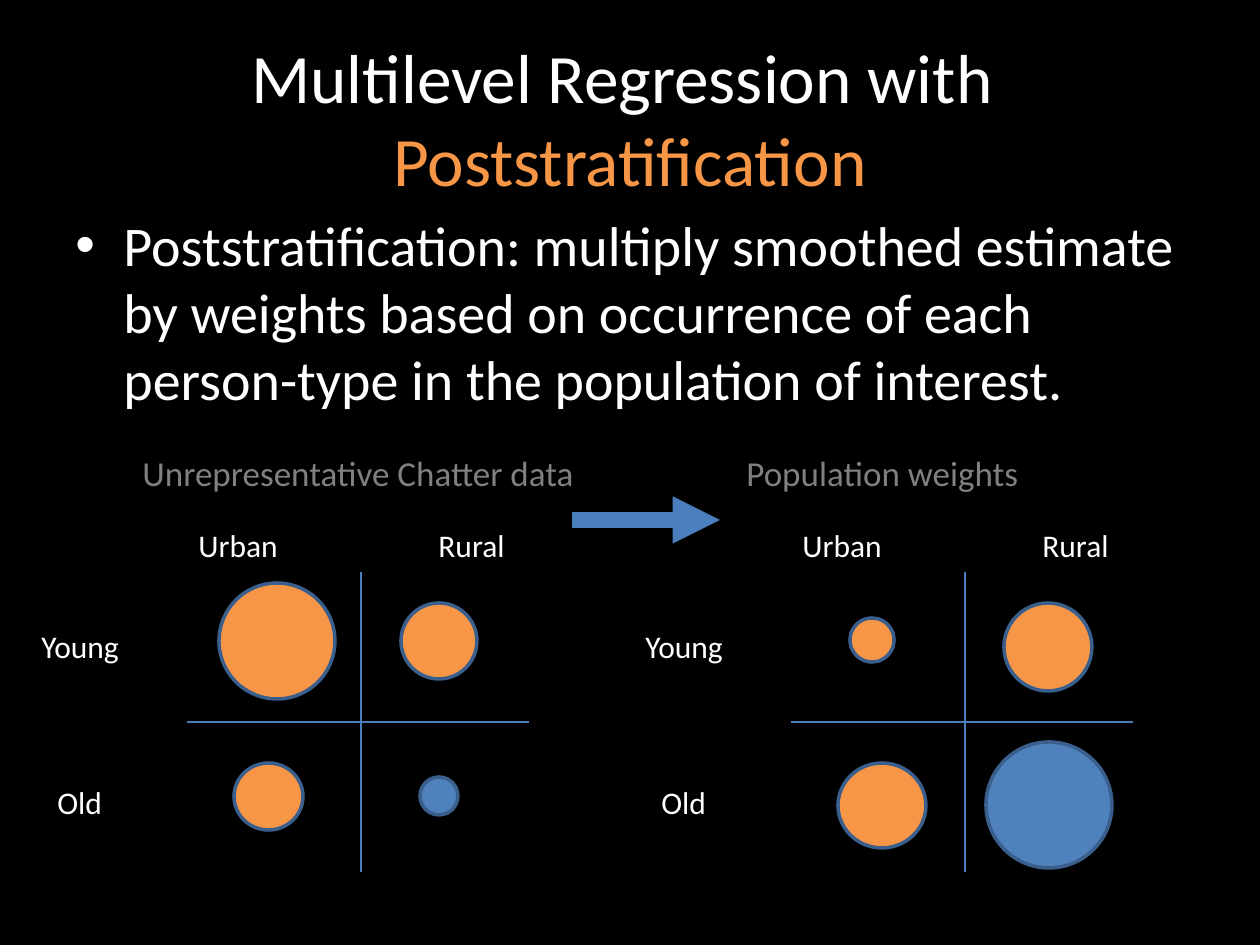
from lxml.etree import SubElement
from pptx import Presentation
from pptx.dml.color import RGBColor
from pptx.enum.shapes import MSO_CONNECTOR as CONN, MSO_SHAPE as SHAPE
from pptx.enum.text import MSO_ANCHOR as ANCHOR, MSO_AUTO_SIZE as AUTO, PP_ALIGN as ALIGN
from pptx.oxml.ns import qn
from pptx.util import Pt

PX = 914400 / 126
WHITE, GREY, ORANGE, BLUE = "FFFFFF", "808080", "F79646", "4F81BD"
LINE, OUTLINE, BLACK = "4B7EBC", "3A5F8C", "000000"


def paint(color_format, color):
    color_format.rgb = RGBColor.from_string(color)


def px(*values):
    return [round(v * PX) for v in values]


prs = Presentation()
prs.slide_width, prs.slide_height = px(1260, 945)
s = prs.slides.add_slide(prs.slide_layouts[6])
s.background.fill.solid()
paint(s.background.fill.fore_color, BLACK)

texts = [
    ("title", (63, 38, 1134, 158), 39.6,
     [("Multilevel Regression with \v", WHITE), ("Poststratification", ORANGE)]),
    ("body", (63, 204, 1134, 230), 32,
     [("Poststratification: multiply smoothed estimate by weights based on "
       "occurrence of each person-type in the population of interest.", WHITE)]),
]
lines = []
circles = []
panels = [
    (0, "Unrepresentative Chatter data", 457,
     [(219, 583, 116, 116, ORANGE), (401, 603, 76, 76, ORANGE),
      (234, 763, 69, 67, ORANGE), (420, 777, 38, 38, BLUE)]),
    (604, "Population weights", 300,
     [(850, 618, 44, 44, ORANGE), (1004, 603, 88, 88, ORANGE),
      (838, 763, 88, 85, ORANGE), (986, 742, 126, 126, BLUE)]),
]
labels = [("Young", 29, 621, 103), ("Old", 45, 777, 71),
          ("Urban", 186, 520, 106), ("Rural", 426, 520, 92)]
for dx, heading, width, dots in panels:
    lines += [(dx + 361, 572, dx + 361, 872, 0.75),
              (dx + 529, 722, dx + 187, 722, 0.75)]
    texts.append(("heading", (dx + 130, 445, width, 55), 20, [(heading, GREY)]))
    for label, x, y, w in labels:
        texts.append(("label", (dx + x, y, w, 50), 18, [(label, WHITE)]))
    circles += dots
lines.append((572, 520, 720, 520, 9))

for role, box, size, runs in texts:
    sp = s.shapes.add_textbox(*px(*box))
    tf = sp.text_frame
    tf.word_wrap = role in ("title", "body")
    p = tf.paragraphs[0]
    if role == "title":
        tf.vertical_anchor = ANCHOR.MIDDLE
        p.alignment = ALIGN.CENTER
    elif role == "body":
        pPr = p._p.get_or_add_pPr()
        indent = px(48)[0]
        pPr.set("marL", str(indent))
        pPr.set("indent", str(-indent))
        SubElement(pPr, qn("a:buFont")).set("typeface", "Arial")
        SubElement(pPr, qn("a:buChar")).set("char", "•")
    else:
        tf.auto_size = AUTO.SHAPE_TO_FIT_TEXT
    if role == "heading":
        sp.fill.solid()
        paint(sp.fill.fore_color, BLACK)
    for text, color in runs:
        head, *rest = text.split("\v")
        r = p.add_run()
        r.text = head
        r.font.name = "Calibri"
        r.font.size = Pt(size)
        paint(r.font.color, color)
        if rest:
            p.add_line_break()

for x1, y1, x2, y2, width in lines:
    ln = s.shapes.add_connector(CONN.STRAIGHT, *px(x1, y1, x2, y2))
    paint(ln.line.color, LINE)
    ln.line.width = Pt(width)
    spPr = ln._element.spPr
    if width > 1:
        SubElement(spPr.find(qn("a:ln")), qn("a:tailEnd")).set("type", "triangle")
    SubElement(spPr, qn("a:effectLst"))

for x, y, w, h, color in circles:
    sp = s.shapes.add_shape(SHAPE.OVAL, *px(x, y, w, h))
    sp.shadow.inherit = False
    sp.fill.solid()
    paint(sp.fill.fore_color, color)
    paint(sp.line.color, OUTLINE)
    sp.line.width = Pt(2)

prs.save("out.pptx")
